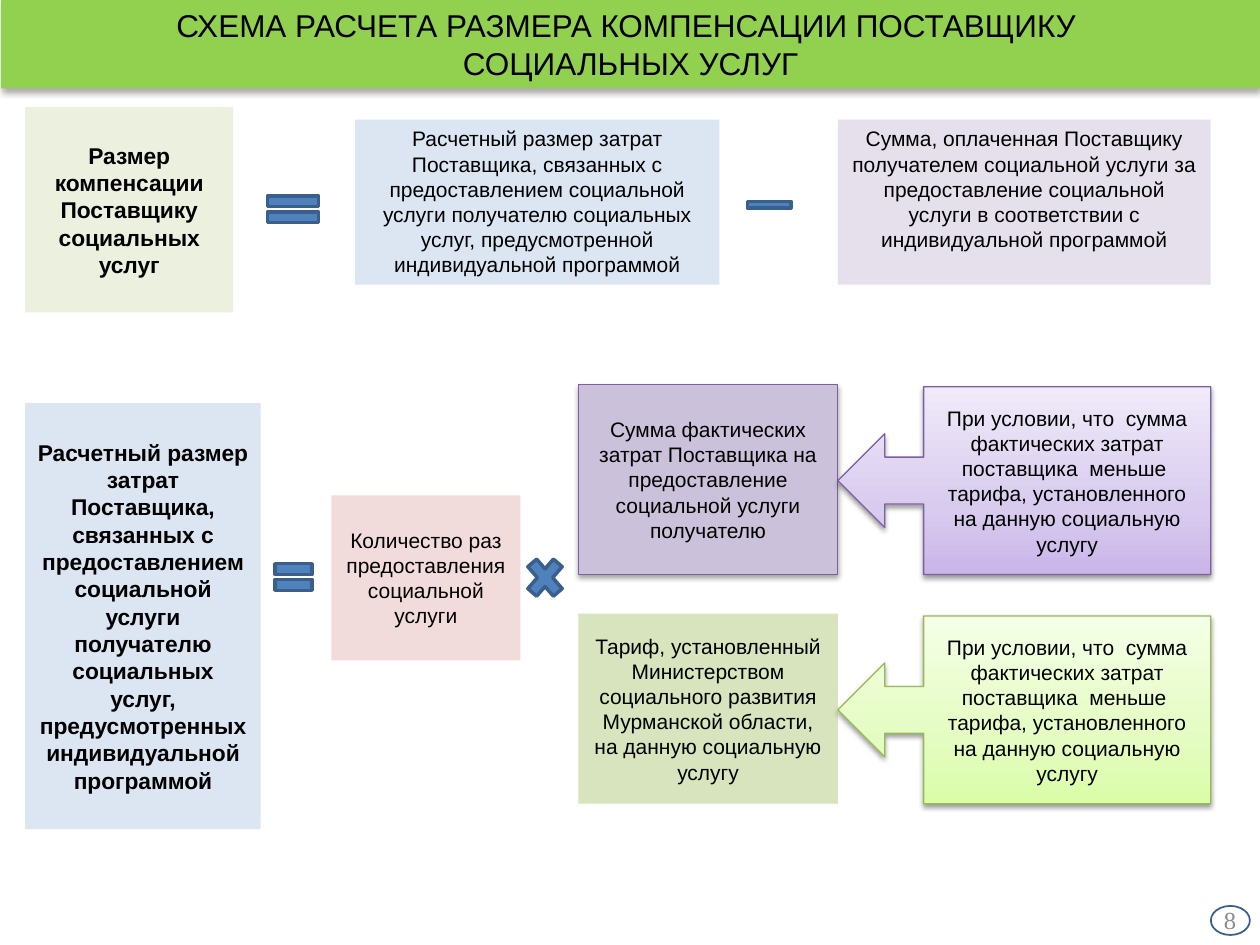
import pptx
import pptx.util
import pptx.dml.color
import pptx.enum.shapes
import pptx.enum.text
import pptx.oxml.ns
from lxml import etree

Pt = pptx.util.Pt
qn = pptx.oxml.ns.qn
SHAPE = pptx.enum.shapes.MSO_SHAPE
ANCHOR = pptx.enum.text.MSO_ANCHOR
ALIGN = pptx.enum.text.PP_ALIGN

COLORS = {
    "title": "92D050", "ink": "000000", "number": "8C8C8C",
    "sign": "4F81BD", "sign_line": "3A5F8C",
    "result": "EBF1DE", "cost": "DCE6F2", "paid": "E6E0EC",
    "count": "F2DCDB", "actual": "CCC1DA", "tariff": "D7E4BD",
    "purple_line": "7D60A0", "green_line": "98B955",
}
GRADIENTS = {
    "purple": ((0, "C9B5E8"), (35, "D8CBEE"), (100, "F0EAF9")),
    "green": ((0, "DAFDA7"), (35, "E4FCC2"), (100, "F5FFE7")),
}
CONDITION = ("При условии, что  сумма фактических затрат поставщика  меньше  "
             "тарифа, установленного на данную социальную услугу")


def rgb(name):
    """Return the named colour."""
    return pptx.dml.color.RGBColor.from_string(COLORS[name])


def add_shape(s, kind, box, fill=None, line=None, width=0.75):
    """Add a preset shape with a flat fill and an optional outline."""
    sp = s.shapes.add_shape(kind, *map(Pt, box))
    sp.shadow.inherit = False
    if fill:
        sp.fill.solid()
        sp.fill.fore_color.rgb = rgb(fill)
    else:
        sp.fill.background()
    if line:
        sp.line.color.rgb = rgb(line)
        sp.line.width = Pt(width)
    else:
        sp.line.fill.background()
    return sp


def add_sign(s, kind, box):
    """Add an arithmetic sign."""
    add_shape(s, kind, box, "sign", "sign_line", 2)


def set_text(sp, lines, size=12, bold=False, anchor=ANCHOR.MIDDLE, color="ink",
             font="Arial", align=ALIGN.CENTER):
    """Write one paragraph, with a line break between lines."""
    tf = sp.text_frame
    tf.word_wrap = True
    tf.vertical_anchor = anchor
    p = tf.paragraphs[0]
    p.alignment = align
    for i, line in enumerate(lines):
        if i:
            p.add_line_break()
        r = p.add_run()
        r.text = line
        r.font.size = Pt(size)
        r.font.bold = bold
        r.font.name = font
        r.font.color.rgb = rgb(color)


def add_box(s, box, fill, text, **style):
    """Add a filled rectangle with text."""
    sp = add_shape(s, SHAPE.RECTANGLE, box, fill)
    set_text(sp, [text], **style)
    return sp


def add_shadow(sp, alpha, blur, dist):
    """Give a shape a soft black shadow straight below it."""
    effects = sp._element.spPr.find(qn("a:effectLst"))
    shadow = etree.SubElement(effects, qn("a:outerShdw"), blurRad=str(Pt(blur)),
                              dist=str(Pt(dist)), dir="5400000", rotWithShape="0")
    color = etree.SubElement(shadow, qn("a:srgbClr"), val=COLORS["ink"])
    etree.SubElement(color, qn("a:alpha"), val=str(alpha * 1000))


def set_gradient(sp, stops):
    """Fill a shape with a gradient running from bottom to top."""
    sp.fill.gradient()
    sp.fill.gradient_angle = 90
    gs_list = sp._element.spPr.find(qn("a:gradFill")).find(qn("a:gsLst"))
    for gs in list(gs_list):
        gs_list.remove(gs)
    for pos, color in stops:
        gs = etree.SubElement(gs_list, qn("a:gs"), pos=str(pos * 1000))
        etree.SubElement(gs, qn("a:srgbClr"), val=color)


def add_title(s, box):
    """Add the title band."""
    sp = add_shape(s, SHAPE.RECTANGLE, box, "title")
    add_shadow(sp, 32, 3.5, 2.2)
    tf = sp.text_frame
    tf.margin_left = tf.margin_right = tf.margin_top = tf.margin_bottom = Pt(3)
    set_text(sp, ["СХЕМА РАСЧЕТА РАЗМЕРА КОМПЕНСАЦИИ ПОСТАВЩИКУ ",
                  "СОЦИАЛЬНЫХ УСЛУГ"], size=18)


def add_compensation(s, box):
    """Add the formula: compensation equals cost minus payment."""
    x, y, w, h = box
    add_box(s, (x, y, 118.8, h), "result",
            "Размер компенсации Поставщику социальных услуг", size=13, bold=True)
    add_sign(s, SHAPE.MATH_EQUAL, (x + 133.2, y + 45.4, 39.6, 25.9))
    add_box(s, (x + 188.6, y + 7.2, 208.1, 94.3), "cost",
            "Расчетный размер затрат Поставщика, связанных с предоставлением "
            "социальной услуги получателю социальных услуг, предусмотренной "
            "индивидуальной программой", anchor=ANCHOR.TOP)
    add_sign(s, SHAPE.MATH_MINUS, (x + 408.2, y + 47.5, 33.8, 16.6))
    add_box(s, (x + w - 213.1, y + 7.2, 213.1, 94.3), "paid",
            "Сумма, оплаченная Поставщику получателем социальной услуги за "
            "предоставление социальной услуги в соответствии с индивидуальной "
            "программой", anchor=ANCHOR.TOP)


def add_condition(s, box, tone):
    """Add a gradient callout that points left."""
    sp = add_shape(s, SHAPE.LEFT_ARROW_CALLOUT, box, line=tone + "_line")
    for i, value in enumerate((0.25, 0.25, 0.25, 0.77)):
        sp.adjustments[i] = value
    set_gradient(sp, GRADIENTS[tone])
    add_shadow(sp, 38, 3.1, 1.6)
    set_text(sp, [CONDITION])


def add_cost(s, box):
    """Add the formula: cost equals count times actual sum or tariff."""
    x, y, w, h = box
    add_box(s, (x, y + 10.8, 134.6, h - 10.8), "cost",
            "Расчетный размер затрат Поставщика, связанных с предоставлением "
            "социальной услуги получателю социальных услуг, предусмотренных "
            "индивидуальной программой", size=13, bold=True)
    add_sign(s, SHAPE.MATH_EQUAL, (x + 139, y + 97.2, 28.8, 25.9))
    add_box(s, (x + 175, y + 63.4, 108, 94.3), "count",
            "Количество раз предоставления социальной услуги")
    add_sign(s, SHAPE.MATH_MULTIPLY, (x + 283, y + 94.3, 28.1, 32.4))
    branches = (
        ("actual", "purple", "Сумма фактических затрат Поставщика на "
         "предоставление социальной услуги получателю"),
        ("tariff", "green", "Тариф, установленный Министерством социального "
         "развития Мурманской области, на данную социальную услугу"),
    )
    for i, (fill, tone, text) in enumerate(branches):
        top = y + 131 * i
        sp = add_box(s, (x + 316.1, top, 148.3, 108.7), fill, text)
        if fill == "actual":
            sp.line.color.rgb = rgb("purple_line")
            sp.line.width = Pt(0.75)
            add_shadow(sp, 35, 3.1, 1.8)
        add_condition(s, (x + w - 213.1, top + 1.4, 213.1, 107.3), tone)


def add_page_number(s, box):
    """Add the page number and its oval."""
    x, y, w, h = box
    sp = s.shapes.add_textbox(*map(Pt, (x, y, w - 0.7, h)))
    set_text(sp, ["8"], size=14, color="number", font="Times New Roman",
             align=ALIGN.RIGHT)
    add_shape(s, SHAPE.OVAL, (x + w - 22.3, y + 6.5, 22.3, 16.6),
              line="sign_line", width=1)


def main():
    """Build the slide and save it."""
    prs = pptx.Presentation()
    prs.slide_width, prs.slide_height = Pt(720), Pt(540)
    s = prs.slides.add_slide(prs.slide_layouts[6])
    add_title(s, (0.7, 0, 719.3, 50.6))
    add_compensation(s, (14.4, 61.2, 677.5, 117.4))
    add_cost(s, (14.4, 219.6, 677.5, 254.2))
    add_page_number(s, (669.6, 511.2, 44.6, 28.8))
    prs.save("out.pptx")


if __name__ == "__main__":
    main()
